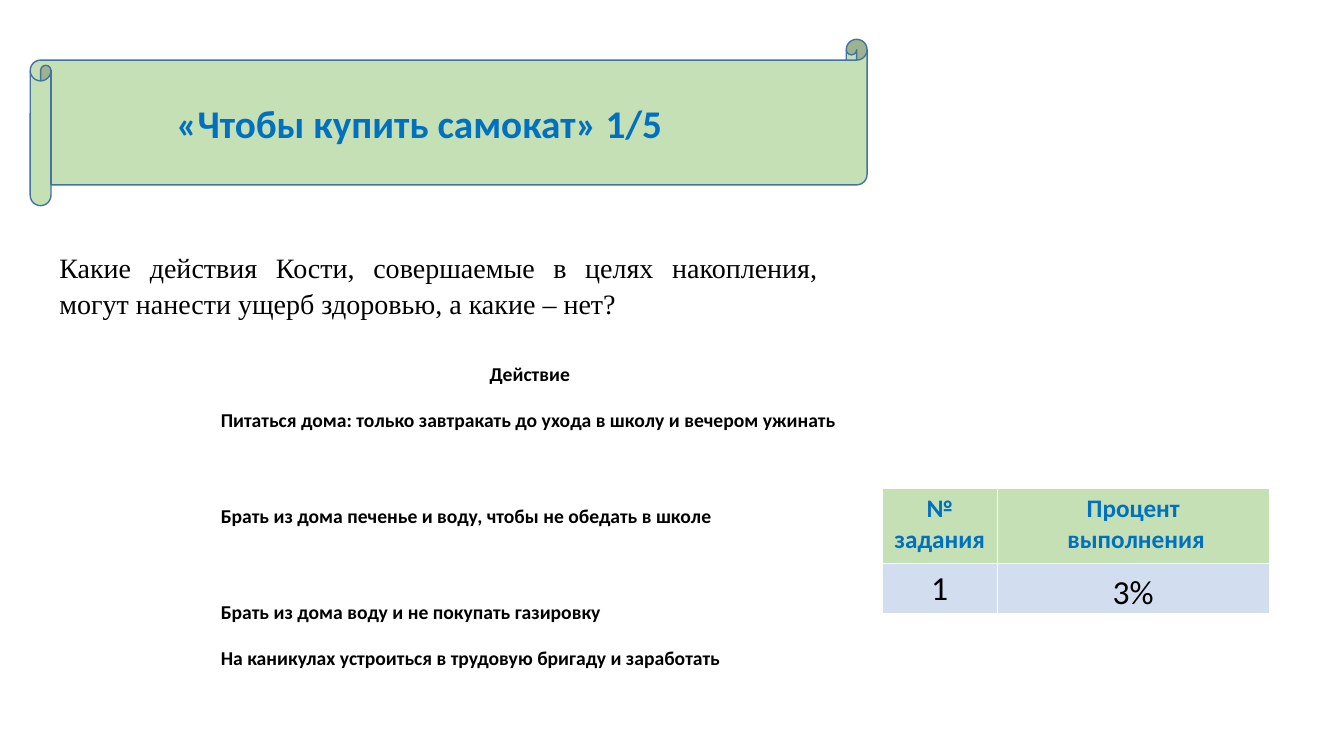
from dataclasses import dataclass

from pptx import Presentation
from pptx.dml.color import RGBColor
from pptx.enum.shapes import MSO_SHAPE
from pptx.enum.text import MSO_ANCHOR, PP_ALIGN
from pptx.util import Inches, Pt

HUES = {"leaf": "C5E0B4", "edge": "43739E", "blue": "0070C0",
        "ink": "000000", "pale": "D2DEEF"}
DEEDS = ["Действие",
         "Питаться дома: только завтракать до ухода в школу и вечером ужинать",
         "Брать из дома печенье и воду, чтобы не обедать в школе",
         "Брать из дома воду и не покупать газировку",
         "На каникулах устроиться в трудовую бригаду и заработать"]
SCORES = [["№ задания", "Процент\n выполнения"], ["1", "3%"]]


@dataclass
class Style:
    size: int
    hue: str = "ink"
    bold: bool = False
    face: str = "Calibri"
    align: PP_ALIGN = PP_ALIGN.LEFT
    line: float = 1.0
    after: int = 0


TITLE = Style(28, "blue", True)
ASK = Style(20, face="Times New Roman", align=PP_ALIGN.JUSTIFY, line=1.07, after=8)
HEAD = Style(14, bold=True, align=PP_ALIGN.CENTER, line=1.07, after=8)
DEED = Style(14, bold=True, line=1.07, after=8)
LABEL = Style(18, "blue", True, align=PP_ALIGN.CENTER)
SCORE = Style(24, align=PP_ALIGN.CENTER)


def color(name: str) -> RGBColor:
    return RGBColor.from_string(HUES[name])


def write(frame, text: str, style: Style) -> None:
    frame.text = text
    for para in frame.paragraphs:
        para.alignment = style.align
        para.line_spacing = style.line
        para.space_before, para.space_after = Pt(0), Pt(style.after)
        font = para.font
        font.name, font.size, font.bold = style.face, Pt(style.size), style.bold
        font.color.rgb = color(style.hue)


def box(*sides: float) -> list:
    return [Inches(side) for side in sides]


def inset(part, x: float, top: float, base: float) -> None:
    part.margin_left = part.margin_right = Inches(x)
    part.margin_top, part.margin_bottom = Inches(top), Inches(base)


def grid(slide, spot: list, wide: list[float], high: list[float]):
    table = slide.shapes.add_table(len(high), len(wide), *spot).table
    table.horz_banding = False
    for col, width in zip(table.columns, wide):
        col.width = Inches(width)
    for row, height in zip(table.rows, high):
        row.height = Inches(height)
    return table


def banner(slide) -> None:
    scroll = slide.shapes.add_shape(MSO_SHAPE.HORIZONTAL_SCROLL, *box(0.3, 0.39, 8.3, 1.65))
    scroll.shadow.inherit = False
    scroll.fill.solid()
    scroll.fill.fore_color.rgb = color("leaf")
    scroll.line.color.rgb = color("edge")
    scroll.line.width = Pt(1)
    title = slide.shapes.title
    title.left, title.top, title.width, title.height = box(1.75, 0.8, 6.6, 0.84)
    frame = title.text_frame
    inset(frame, 0, 0, 0)
    frame.vertical_anchor = MSO_ANCHOR.MIDDLE
    write(frame, "«Чтобы купить самокат» 1/5", TITLE)
    scroll.element.addnext(title.element)


def question(slide) -> None:
    frame = slide.shapes.add_textbox(*box(0.49, 2.41, 7.72, 0.8)).text_frame
    frame.word_wrap = True
    write(frame, "Какие действия Кости, совершаемые в целях накопления, "
          "могут нанести ущерб здоровью, а какие – нет?", ASK)


def deeds(slide) -> None:
    table = grid(slide, box(2.12, 3.58, 6.27, 3.77), [6.27], [0.46, 0.95, 0.95, 0.46, 0.95])
    for row, text in enumerate(DEEDS):
        cell = table.cell(row, 0)
        cell.fill.background()
        inset(cell, 0.07, 0, 0)
        write(cell.text_frame, text, DEED if row else HEAD)


def scores(slide) -> None:
    table = grid(slide, box(8.75, 4.85, 3.84, 1.24), [1.14, 2.7], [0.74, 0.5])
    for row, texts in enumerate(SCORES):
        for col, text in enumerate(texts):
            cell = table.cell(row, col)
            cell.fill.solid()
            cell.fill.fore_color.rgb = color("pale" if row else "leaf")
            write(cell.text_frame, text, SCORE if row else LABEL)
    last = table.cell(1, 1)
    inset(last, 0.01, 0.01, 0)
    last.vertical_anchor = MSO_ANCHOR.BOTTOM


def main() -> None:
    """Build the slide about saving up for a scooter."""
    deck = Presentation()
    deck.slide_width, deck.slide_height = box(13.33, 7.5)
    slide = deck.slides.add_slide(deck.slide_layouts[5])
    banner(slide)
    question(slide)
    deeds(slide)
    scores(slide)
    deck.save("out.pptx")


if __name__ == "__main__":
    main()
